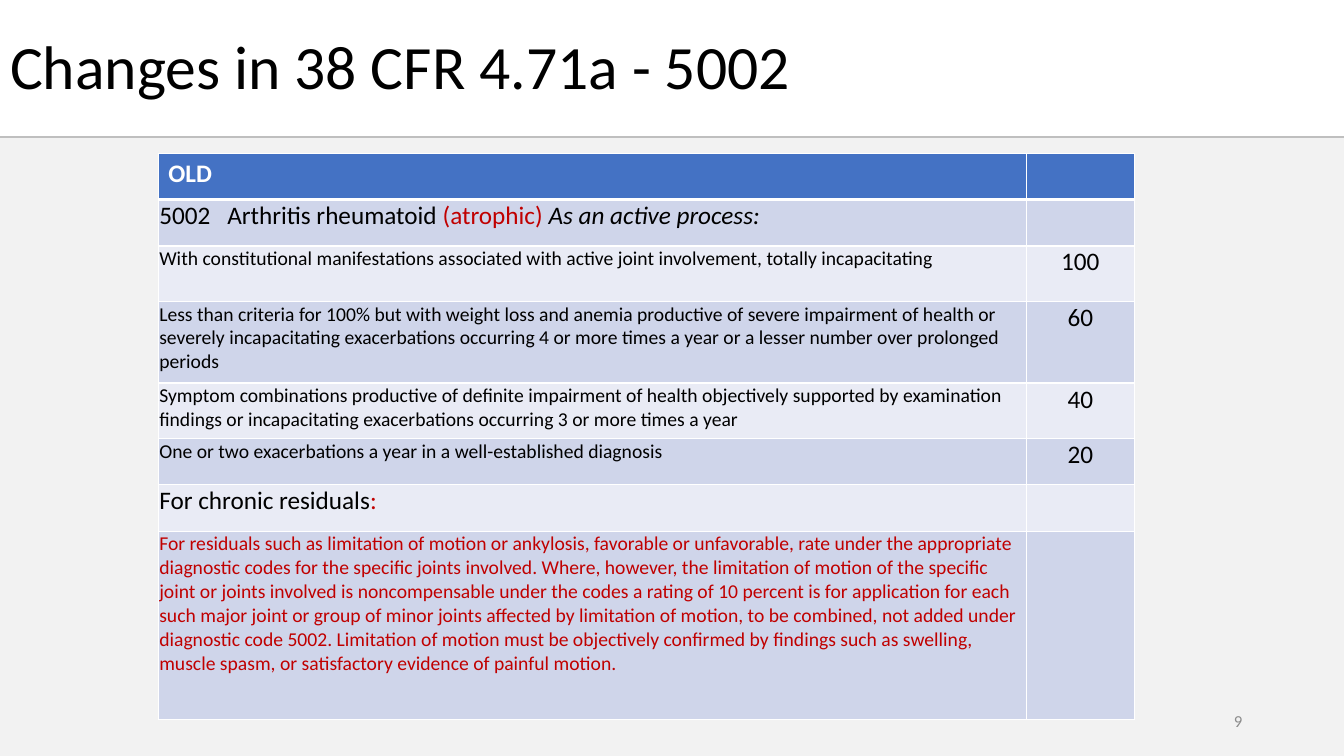
from lxml.etree import SubElement
from pptx import Presentation
from pptx.dml.color import RGBColor
from pptx.enum.shapes import MSO_CONNECTOR, MSO_SHAPE
from pptx.enum.text import MSO_ANCHOR, MSO_AUTO_SIZE, PP_ALIGN
from pptx.oxml.ns import qn
from pptx.util import Inches, Pt

COLORS = {
    "black": "000000",
    "white": "FFFFFF",
    "red": "C00000",
    "header": "4472C4",
    "dark_band": "CFD5EA",
    "light_band": "E9EBF5",
    "backdrop": "F2F2F2",
    "rule": "BFBFBF",
    "page_number": "8C8C8C",
}

COLUMN_WIDTHS = [8.61, 1.07]

RATING_ROWS = [
    (0.46, 18, [("5002   Arthritis rheumatoid ", "black", False),
                ("(atrophic) ", "red", False),
                ("As an active process:", "black", True)], ""),
    (0.55, 14, [("With constitutional manifestations associated with active joint "
                 "involvement, totally incapacitating", "black", False)], "100"),
    (0.81, 14, [("Less than criteria for 100% but with weight loss and anemia productive "
                 "of severe impairment of health or severely incapacitating exacerbations "
                 "occurring 4 or more times a year or a lesser number over prolonged "
                 "periods", "black", False)], "60"),
    (0.55, 14, [("Symptom combinations productive of definite impairment of health "
                 "objectively supported by examination findings or incapacitating "
                 "exacerbations occurring 3 or more times a year", "black", False)], "40"),
    (0.46, 14, [("One or two exacerbations a year in a well-established diagnosis",
                 "black", False)], "20"),
    (0.46, 18, [("For chronic residuals", "black", False), (":", "red", False)], ""),
    (1.87, 14, [("For residuals such as limitation of motion or ankylosis, favorable or "
                 "unfavorable, rate under the appropriate diagnostic codes for the specific "
                 "joints involved. Where, however, the limitation of motion of the specific "
                 "joint or joints involved is noncompensable under the codes a rating of 10 "
                 "percent is for application for each such major joint or group of minor "
                 "joints affected by limitation of motion, to be combined, not added under "
                 "diagnostic code 5002. Limitation of motion must be objectively confirmed "
                 "by findings such as swelling, muscle spasm, or satisfactory evidence of "
                 "painful motion.", "red", False)], ""),
]


class SlideBuilder:
    font_name = "Calibri"

    def __init__(self, slide):
        self.slide = slide

    def color(self, name):
        return RGBColor.from_string(COLORS[name])

    def format_run(self, run, size, color, bold=False, italic=False):
        run.font.name = self.font_name
        run.font.size = Pt(size)
        run.font.bold = bold
        run.font.italic = italic
        run.font.color.rgb = self.color(color)

    def title(self, wording, left, top, width, height):
        heading = self.slide.shapes.title
        heading.left, heading.top = Inches(left), Inches(top)
        heading.width, heading.height = Inches(width), Inches(height)
        frame = heading.text_frame
        frame.text = wording
        frame.auto_size = MSO_AUTO_SIZE.NONE
        frame.vertical_anchor = MSO_ANCHOR.MIDDLE
        paragraph = frame.paragraphs[0]
        paragraph.alignment = PP_ALIGN.LEFT
        paragraph.line_spacing = 0.9
        self.format_run(paragraph.runs[0], 44, "black")

    def backdrop(self, left, top, width, height):
        panel = self.slide.shapes.add_shape(
            MSO_SHAPE.RECTANGLE, Inches(left), Inches(top), Inches(width), Inches(height))
        panel.shadow.inherit = False
        panel.fill.solid()
        panel.fill.fore_color.rgb = self.color("backdrop")
        panel.line.fill.background()

    def rule(self, left, right, y):
        divider = self.slide.shapes.add_connector(
            MSO_CONNECTOR.STRAIGHT, Inches(left), Inches(y), Inches(right), Inches(y))
        divider.line.color.rgb = self.color("rule")
        divider.line.width = Pt(1.5)
        SubElement(divider._element.spPr, qn("a:effectLst"))

    def page_number(self, number, left, top, width, height):
        box = self.slide.shapes.add_textbox(
            Inches(left), Inches(top), Inches(width), Inches(height))
        frame = box.text_frame
        frame.word_wrap = True
        frame.vertical_anchor = MSO_ANCHOR.MIDDLE
        frame.text = number
        frame.paragraphs[0].alignment = PP_ALIGN.RIGHT
        self.format_run(frame.paragraphs[0].runs[0], 12, "page_number")

    def style_cell(self, cell, fill, top=1, bottom=1):
        properties = cell._tc.get_or_add_tcPr()
        for side, points in (("L", 1), ("R", 1), ("T", top), ("B", bottom)):
            border = SubElement(properties, qn(f"a:ln{side}"), w=str(Pt(points)))
            solid = SubElement(border, qn("a:solidFill"))
            SubElement(solid, qn("a:srgbClr"), val=COLORS["white"])
        cell.fill.solid()
        cell.fill.fore_color.rgb = self.color(fill)

    def write_cell(self, cell, pieces, size, bold=False, alignment=PP_ALIGN.LEFT):
        paragraph = cell.text_frame.paragraphs[0]
        paragraph.alignment = alignment
        for wording, color, italic in pieces:
            run = paragraph.add_run()
            run.text = wording
            self.format_run(run, size, color, bold, italic)

    def tighten_cell(self, cell):
        cell.margin_left = cell.margin_right = Inches(0.01)
        cell.margin_top = cell.margin_bottom = Inches(0.01)

    def rating_table(self, left, top, header, header_height, rows):
        heights = [header_height] + [row[0] for row in rows]
        table = self.slide.shapes.add_table(
            len(heights), len(COLUMN_WIDTHS), Inches(left), Inches(top),
            Inches(sum(COLUMN_WIDTHS)), Inches(sum(heights))).table
        table.horz_banding = False
        for column, width in zip(table.columns, COLUMN_WIDTHS):
            column.width = Inches(width)
        for row, height in zip(table.rows, heights):
            row.height = Inches(height)

        for column in range(len(COLUMN_WIDTHS)):
            self.style_cell(table.cell(0, column), "header", bottom=3)
        self.write_cell(table.cell(0, 0), [(header, "white", False)], 18, bold=True)

        for index, (_, size, criteria, rating) in enumerate(rows, start=1):
            band = "dark_band" if index % 2 else "light_band"
            criteria_cell, rating_cell = table.cell(index, 0), table.cell(index, 1)
            for cell in (criteria_cell, rating_cell):
                self.style_cell(cell, band, top=3 if index == 1 else 1)
            self.tighten_cell(criteria_cell)
            self.write_cell(criteria_cell, criteria, size)
            if rating:
                self.tighten_cell(rating_cell)
                self.write_cell(rating_cell, [(rating, "black", False)], 18,
                                alignment=PP_ALIGN.CENTER)


def main():
    presentation = Presentation()
    presentation.slide_width = Inches(13.33)
    presentation.slide_height = Inches(7.5)
    builder = SlideBuilder(presentation.slides.add_slide(presentation.slide_layouts[5]))
    builder.backdrop(0, 1.37, 13.33, 6.13)
    builder.rule(0, 13.33, 1.36)
    builder.title("Changes in 38 CFR 4.71a - 5002", 0, 0.15, 8.83, 1.07)
    builder.rating_table(1.57, 1.52, "OLD", 0.46, RATING_ROWS)
    builder.page_number("9", 9.42, 6.95, 3, 0.4)
    presentation.save("out.pptx")


if __name__ == "__main__":
    main()
